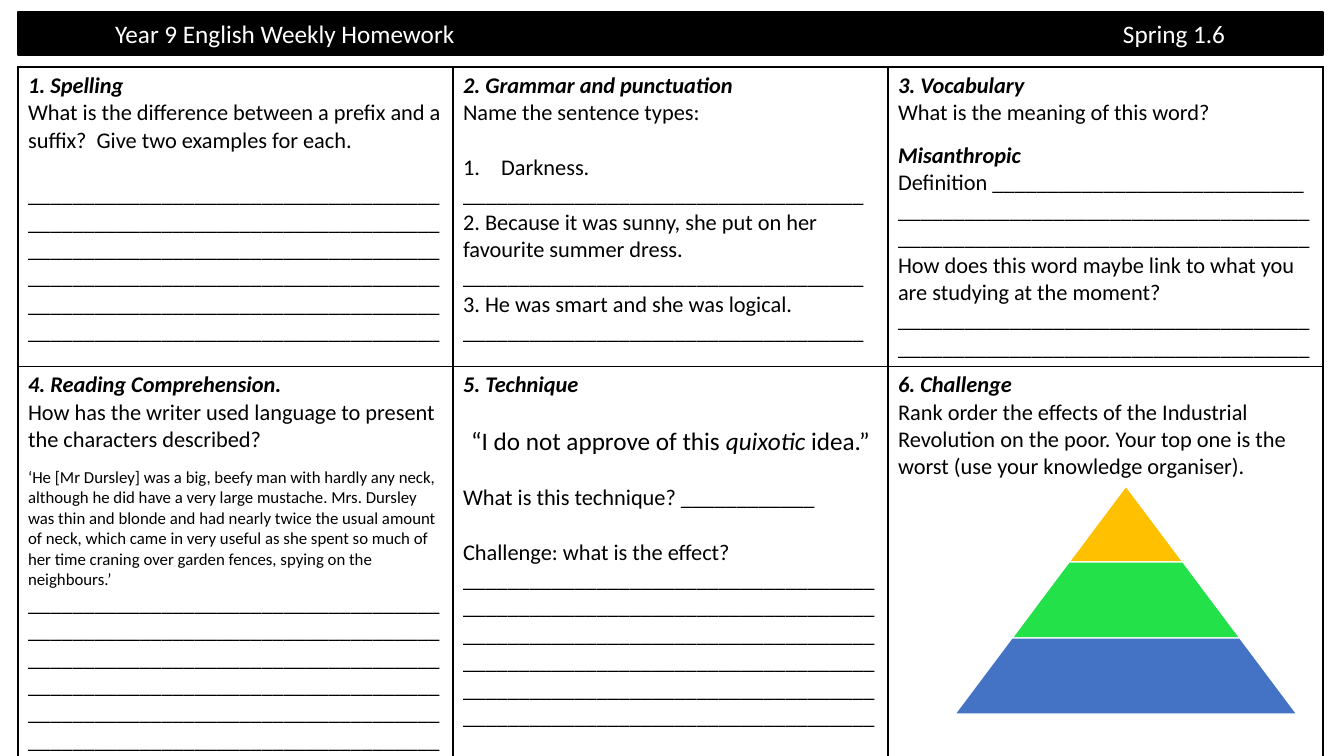
import dataclasses
import typing

import lxml.etree
import pptx
import pptx.dml.color
import pptx.enum.shapes
import pptx.enum.text
import pptx.oxml.ns
import pptx.util

BLACK = pptx.dml.color.RGBColor(0x00, 0x00, 0x00)
WHITE = pptx.dml.color.RGBColor(0xFF, 0xFF, 0xFF)
AMBER = pptx.dml.color.RGBColor(0xFF, 0xC0, 0x00)
GREEN = pptx.dml.color.RGBColor(0x23, 0xE1, 0x48)
BLUE = pptx.dml.color.RGBColor(0x44, 0x72, 0xC4)

EMU_PER_PX = 914400 / 100.8
FONT = "Calibri"
BLANK_LINE = 19.5
CENTER = pptx.enum.text.PP_ALIGN.CENTER
LEFT = pptx.enum.text.PP_ALIGN.LEFT

LEFT_EDGE, BAR_TOP, BAR_WIDTH, BAR_HEIGHT = 18, 12, 1305, 43
TABLE_TOP, COLUMN_WIDTH, ROW_HEIGHTS = 67, 435, (291, 376)
PYRAMID_CENTER, PYRAMID_TOP, TIER_WIDTH, TIER_HEIGHT = 1126, 486, 114, 76


@dataclasses.dataclass(frozen=True)
class Run:
    text: str
    size: int = 16
    bold: bool = False
    italic: bool = False


@dataclasses.dataclass(frozen=True)
class Line:
    runs: tuple[Run, ...]
    space_before: float = 0
    alignment: typing.Any = LEFT
    numbered: bool = False


def px(length: int) -> int:
    return round(length * EMU_PER_PX)


def plain(text: str, space_before: float = 0, size: int = 16, numbered: bool = False) -> Line:
    return Line((Run(text, size),), space_before, numbered=numbered)


def heading(text: str, space_before: float = 0) -> Line:
    return Line((Run(text, bold=True, italic=True),), space_before)


def rule(count: int, space_before: float = 0) -> Line:
    return plain("_" * count, space_before)


TASKS = (
    (
        (
            heading("1. Spelling"),
            plain("What is the difference between a prefix and a suffix?  Give two examples for each."),
            rule(222, BLANK_LINE),
        ),
        (
            heading("2. Grammar and punctuation"),
            plain("Name the sentence types:"),
            plain("Darkness.", BLANK_LINE, numbered=True),
            rule(36),
            plain("2. Because it was sunny, she put on her favourite summer dress. " + "_" * 36),
            plain("3. He was smart and she was logical."),
            rule(36),
        ),
        (
            heading("3. Vocabulary"),
            plain("What is the meaning of this word?"),
            heading("Misanthropic", 11),
            plain(
                "Definition " + "_" * 28 + " " + "_" * 74
                + "How does this word maybe link to what you are studying at the moment?"
            ),
            rule(74),
        ),
    ),
    (
        (
            heading("4. Reading Comprehension."),
            plain("How has the writer used language to present the characters described?"),
            plain(
                "‘He [Mr Dursley] was a big, beefy man with hardly any neck, although he did have "
                "a very large mustache. Mrs. Dursley was thin and blonde and had nearly twice the "
                "usual amount of neck, which came in very useful as she spent so much of her time "
                "craning over garden fences, spying on the neighbours.’",
                9.8,
                12,
            ),
            rule(222),
        ),
        (
            heading("5. Technique"),
            Line(
                (
                    Run("“I do not approve of this ", 18),
                    Run("quixotic", 18, italic=True),
                    Run(" idea.”", 18),
                ),
                BLANK_LINE,
                CENTER,
            ),
            plain("What is this technique? " + "_" * 12, BLANK_LINE),
            plain("Challenge: what is the effect? " + "_" * 222, BLANK_LINE),
        ),
        (
            heading("6. Challenge"),
            plain(
                "Rank order the effects of the Industrial Revolution on the poor. "
                "Your top one is the worst (use your knowledge organiser)."
            ),
        ),
    ),
)


def set_values(target: typing.Any, values: dict[str, typing.Any]) -> None:
    for name, value in values.items():
        setattr(target, name, value)


def add_run(paragraph: typing.Any, run: Run, color: pptx.dml.color.RGBColor) -> None:
    font_run = paragraph.add_run()
    font_run.text = run.text
    set_values(font_run.font, {
        "name": FONT,
        "size": pptx.util.Pt(run.size),
        "bold": run.bold,
        "italic": run.italic,
    })
    font_run.font.color.rgb = color


def add_child(parent: typing.Any, tag: str, **attributes: str) -> typing.Any:
    return lxml.etree.SubElement(parent, pptx.oxml.ns.qn(tag), attributes)


def write_lines(text_frame: typing.Any, lines: tuple[Line, ...]) -> None:
    for index, line in enumerate(lines):
        paragraph = text_frame.add_paragraph() if index else text_frame.paragraphs[0]
        set_values(paragraph, {
            "alignment": line.alignment,
            "space_before": pptx.util.Pt(line.space_before),
        })
        if line.numbered:
            properties = paragraph._p.get_or_add_pPr()
            properties.set("marL", str(px(38)))
            properties.set("indent", str(-px(38)))
            add_child(properties, "a:buFont", typeface="+mj-lt")
            add_child(properties, "a:buAutoNum", type="arabicPeriod")
        for run in line.runs:
            add_run(paragraph, run, BLACK)


def add_borders(cell: typing.Any) -> None:
    properties = cell._tc.get_or_add_tcPr()
    for index, side in enumerate(("a:lnL", "a:lnR", "a:lnT", "a:lnB")):
        border = add_child(properties, side, w=str(pptx.util.Pt(1)))
        add_child(add_child(border, "a:solidFill"), "a:srgbClr", val=str(BLACK))
        properties.insert(index, border)


def format_title(title: typing.Any) -> None:
    set_values(title, {
        "left": px(LEFT_EDGE),
        "top": px(BAR_TOP),
        "width": px(BAR_WIDTH),
        "height": px(BAR_HEIGHT),
    })
    title.fill.solid()
    title.fill.fore_color.rgb = BLACK
    title.line.color.rgb = BLACK
    title.line.width = pptx.util.Pt(1)
    set_values(title.text_frame, {
        "word_wrap": True,
        "auto_size": pptx.enum.text.MSO_AUTO_SIZE.NONE,
        "vertical_anchor": pptx.enum.text.MSO_ANCHOR.MIDDLE,
        "margin_left": px(97),
    })
    paragraph = title.text_frame.paragraphs[0]
    paragraph.alignment = LEFT
    tabs = add_child(paragraph._p.get_or_add_pPr(), "a:tabLst")
    add_child(tabs, "a:tab", pos=str(px(1008)), algn="l")
    add_run(paragraph, Run("Year 9 English Weekly Homework\tSpring 1.6", 18), WHITE)


def add_task_table(slide: typing.Any) -> None:
    table = slide.shapes.add_table(
        len(TASKS), len(TASKS[0]), px(LEFT_EDGE), px(TABLE_TOP), px(BAR_WIDTH), px(sum(ROW_HEIGHTS))
    ).table
    set_values(table, {"first_row": False, "horz_banding": False})
    for column in table.columns:
        column.width = px(COLUMN_WIDTH)
    for row_index, tasks in enumerate(TASKS):
        table.rows[row_index].height = px(ROW_HEIGHTS[row_index])
        for column_index, lines in enumerate(tasks):
            cell = table.cell(row_index, column_index)
            cell.fill.background()
            add_borders(cell)
            write_lines(cell.text_frame, lines)


def add_pyramid(slide: typing.Any) -> None:
    pyramid = slide.shapes.add_group_shape()
    for index, color in enumerate((AMBER, GREEN, BLUE)):
        width = TIER_WIDTH * (index + 1)
        tier = pyramid.shapes.add_shape(
            pptx.enum.shapes.MSO_SHAPE.TRAPEZOID,
            px(PYRAMID_CENTER - width // 2), px(PYRAMID_TOP + index * TIER_HEIGHT),
            px(width), px(TIER_HEIGHT),
        )
        tier.adjustments[0] = TIER_WIDTH / 2 / TIER_HEIGHT
        tier.shadow.inherit = False
        tier.fill.solid()
        tier.fill.fore_color.rgb = color
        tier.line.color.rgb = WHITE
        tier.line.width = pptx.util.Pt(1)


def main() -> None:
    presentation = pptx.Presentation()
    set_values(presentation, {"slide_width": px(1344), "slide_height": px(756)})
    slide = presentation.slides.add_slide(presentation.slide_layouts.get_by_name("Title Only"))
    format_title(slide.shapes.title)
    add_task_table(slide)
    add_pyramid(slide)
    presentation.save("out.pptx")


if __name__ == "__main__":
    main()
